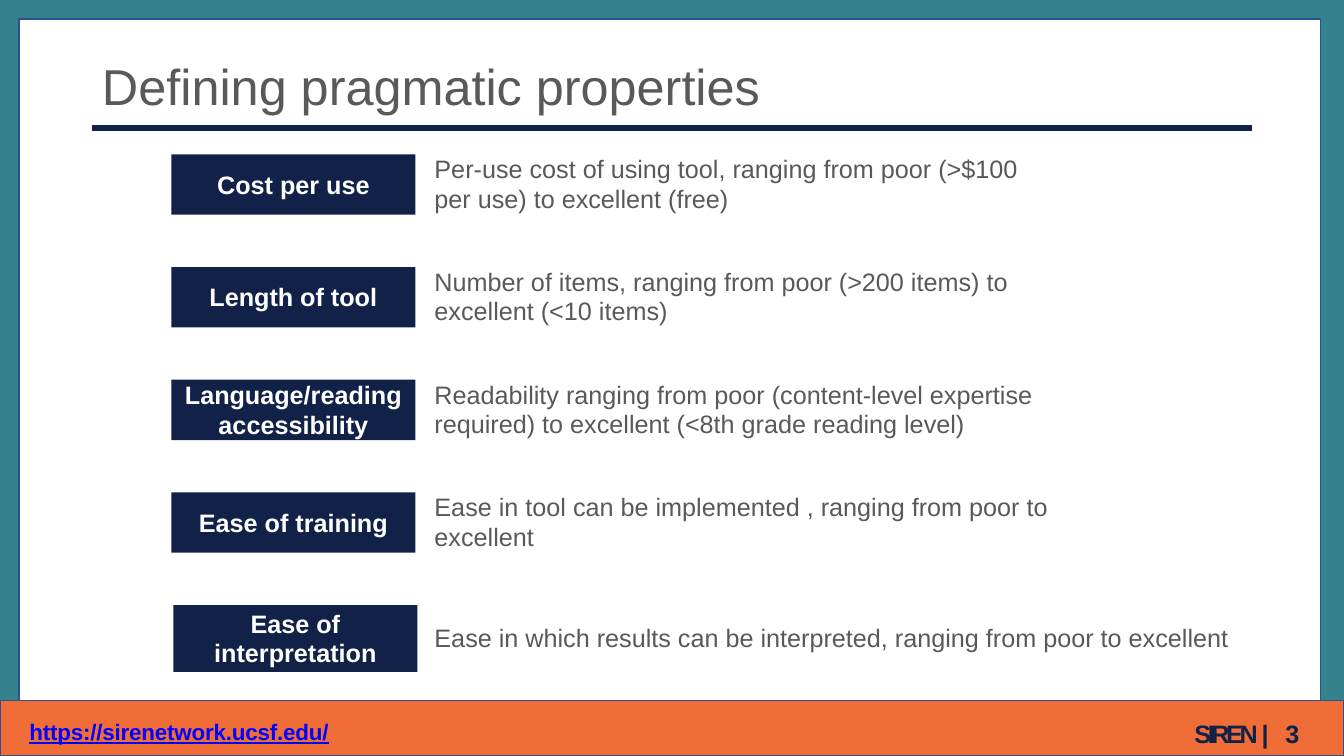
from dataclasses import dataclass

from lxml import etree
from pptx import Presentation
from pptx import util as u
from pptx.dml.color import RGBColor
from pptx.enum import shapes, text
from pptx.oxml.ns import qn

# Content
TITLE = "Defining pragmatic properties"
LINK = "https://sirenetwork.ucsf.edu/"
# (words, letter spacing in points)
PAGE_MARK = [("SIREN ", -2.4), ("| ", 3.5), ("3", -0.5)]
# (property, label left, label height, description, width, lines), lengths in cm
PROPERTIES = [
    ("Cost per use", 4.32, 1.52,
     "Per-use cost of using tool, ranging from poor (>$100 per use) to excellent (free)", 14.9, 2),
    ("Length of tool", 4.32, 1.52,
     "Number of items, ranging from poor (>200 items) to excellent (<10 items)", 14.6, 2),
    ("Language/reading accessibility", 4.32, 1.52,
     "Readability ranging from poor (content-level expertise required) to excellent "
     "(<8th grade reading level)", 15.2, 2),
    ("Ease of training", 4.32, 1.52,
     "Ease in tool can be implemented , ranging from poor to excellent", 15.6, 2),
    ("Ease of interpretation", 4.37, 1.68,
     "Ease in which results can be interpreted, ranging from poor to excellent", 20.2, 1),
]


@dataclass(frozen=True)
class Theme:
    font: str = "Arial"
    navy: str = "112148"
    teal: str = "34828C"
    orange: str = "F06D37"
    white: str = "FFFFFF"
    grey: str = "595959"
    link: str = "0000FF"
    outline: str = "2F528F"
    title_size: float = 36
    text_size: float = 18
    link_size: float = 16
    leading: float = 21


THEME = Theme()
SLIDE_W, SLIDE_H = 33.87, 19.05
FOOTER_TOP = 17.65
MARGIN = 0.48
FIRST_TOP, PITCH = 3.89, 2.84
LABEL_W, TEXT_LEFT = 6.15, 10.92
TEXT_HEIGHT = {1: 0.84, 2: 1.58}


def set_all(target, **values):
    for name, value in values.items():
        setattr(target, name, value)


def write(shape, spans, size, color, bold=False, underline=False, leading=None,
          align=text.PP_ALIGN.LEFT, anchor=text.MSO_ANCHOR.TOP, inset_left=0, inset_top=0):
    frame = shape.text_frame
    set_all(frame, word_wrap=True, auto_size=text.MSO_AUTO_SIZE.NONE, vertical_anchor=anchor,
            margin_left=u.Cm(inset_left), margin_top=u.Cm(inset_top),
            margin_right=0, margin_bottom=0)
    para = frame.paragraphs[0]
    set_all(para, alignment=align, space_before=u.Pt(0))
    if leading:
        para.line_spacing = u.Pt(leading)
    for words, spacing in spans:
        span = para.add_run()
        span.text = words
        set_all(span.font, name=THEME.font, size=u.Pt(size), bold=bold, underline=underline)
        span.font.color.rgb = RGBColor.from_string(color)
        if spacing:
            span._r.get_or_add_rPr().set("spc", str(round(spacing * 100)))


def add_rect(page, left, top, width, height, fill, outline=None):
    rect = page.shapes.add_shape(shapes.MSO_SHAPE.RECTANGLE,
                                 *map(u.Cm, (left, top, width, height)))
    rect.shadow.inherit = False
    rect.fill.solid()
    rect.fill.fore_color.rgb = RGBColor.from_string(fill)
    if outline:
        rect.line.color.rgb = RGBColor.from_string(outline)
        rect.line.width = u.Pt(1)
    else:
        rect.line.fill.background()
    return rect


def add_text(page, left, top, width, height, spans, size, color, **layout):
    box = page.shapes.add_textbox(*map(u.Cm, (left, top, width, height)))
    write(box, spans, size, color, inset_left=0.03, **layout)


def add_frame(page):
    add_rect(page, 0, 0, SLIDE_W, FOOTER_TOP, THEME.teal)
    add_rect(page, 0, FOOTER_TOP, SLIDE_W, SLIDE_H - FOOTER_TOP, THEME.orange, THEME.outline)
    add_rect(page, MARGIN, MARGIN, 32.8, FOOTER_TOP - MARGIN, THEME.white, THEME.outline)


def add_title(page):
    title = page.shapes.title
    title.element.getparent().append(title.element)  # in front of the frame
    set_all(title, left=u.Cm(2.54), top=u.Cm(0.64), width=u.Cm(26.85), height=u.Cm(2.31))
    write(title, [(TITLE, 0)], THEME.title_size, THEME.grey,
          anchor=text.MSO_ANCHOR.MIDDLE, inset_left=0.03, inset_top=0.69)
    rule = page.shapes.add_connector(shapes.MSO_CONNECTOR.STRAIGHT,
                                     *map(u.Cm, (2.33, 3.23, 31.55, 3.23)))
    rule.line.color.rgb = RGBColor.from_string(THEME.navy)
    rule.line.width = u.Pt(4.5)
    etree.SubElement(rule._element.spPr, qn("a:effectLst"))


def add_properties(page):
    for row, (name, left, height, description, width, lines) in enumerate(PROPERTIES):
        top = FIRST_TOP + row * PITCH
        label = add_rect(page, left, top, LABEL_W, height, THEME.navy)
        write(label, [(name, 0)], THEME.text_size, THEME.white, bold=True,
              leading=THEME.leading, align=text.PP_ALIGN.CENTER,
              anchor=text.MSO_ANCHOR.MIDDLE)
        text_height = TEXT_HEIGHT[lines]
        text_top = top + (height - text_height) / 2 - 0.04
        add_text(page, TEXT_LEFT, text_top, width, text_height, [(description, 0)],
                 THEME.text_size, THEME.grey, leading=THEME.leading, inset_top=0.07)


def add_footer(page):
    add_text(page, 0.71, 18.19, 7.9, 0.64, [(LINK, -0.1)], THEME.link_size, THEME.link,
             bold=True, underline=True, leading=16.5)
    add_text(page, 30.07, 18.1, 2.9, 0.84, PAGE_MARK, THEME.text_size, THEME.navy,
             bold=True)


def main():
    deck = Presentation()
    set_all(deck, slide_width=u.Cm(SLIDE_W), slide_height=u.Cm(SLIDE_H))
    page = deck.slides.add_slide(deck.slide_layouts.get_by_name("Title Only"))
    add_frame(page)
    add_title(page)
    add_properties(page)
    add_footer(page)
    deck.save("out.pptx")


if __name__ == "__main__":
    main()
